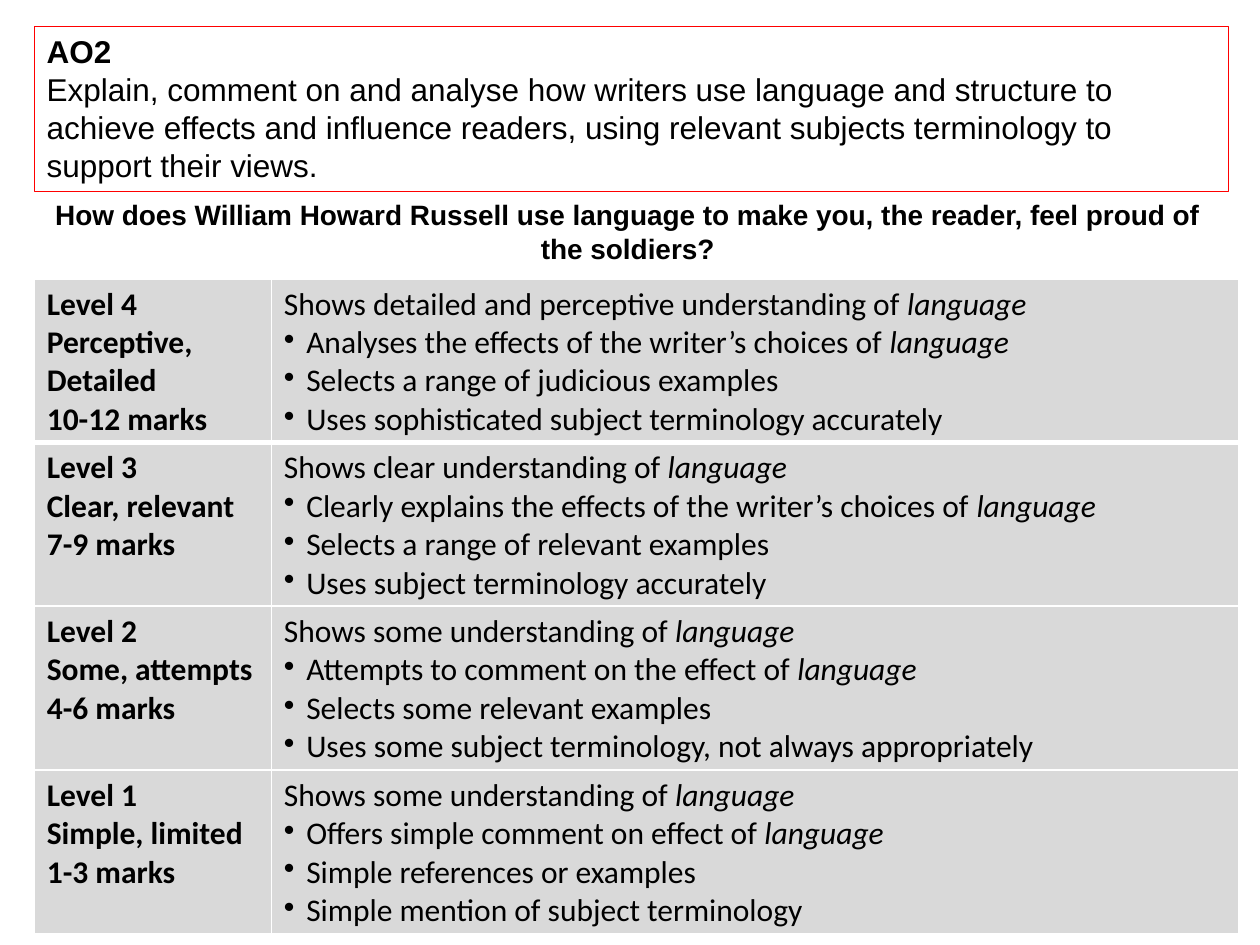
import pptx
import pptx.dml.color
import pptx.enum.shapes
import pptx.enum.text
import pptx.oxml
import pptx.oxml.ns
import pptx.util
from pptx.util import Cm

LEFT = Cm(0.69)
BLACK, WHITE, RED, GREY = "000000", "FFFFFF", "FF0000", "D9D9D9"
AIM = ("Explain, comment on and analyse how writers use language and structure to achieve effects "
       "and influence readers, using relevant subjects terminology to support their views.")
QUESTION = ("How does William Howard Russell use language to make you, the reader, "
            "feel proud of the soldiers?")
KEYWORD = "language"
LEVELS = [
    (["Level 4", "Perceptive, Detailed", "10-12 marks"],
     ["Shows detailed and perceptive understanding of language",
      "Analyses the effects of the writer’s choices of language",
      "Selects a range of judicious examples",
      "Uses sophisticated subject terminology accurately"]),
    (["Level 3", "Clear, relevant", "7-9 marks"],
     ["Shows clear understanding of language",
      "Clearly explains the effects of the writer’s choices of language",
      "Selects a range of relevant examples",
      "Uses subject terminology accurately"]),
    (["Level 2", "Some, attempts", "4-6 marks"],
     ["Shows some understanding of language",
      "Attempts to comment on the effect of language",
      "Selects some relevant examples",
      "Uses some subject terminology, not always appropriately"]),
    (["Level 1", "Simple, limited", "1-3 marks"],
     ["Shows some understanding of language",
      "Offers simple comment on effect of language",
      "Simple references or examples",
      "Simple mention of subject terminology"]),
]


def rgb(value):
    """Return the colour for a hex string."""
    return pptx.dml.color.RGBColor.from_string(value)


def add_run(p, text, size=18, font="Arial", bold=False, italic=False):
    """Add one formatted run to a paragraph."""
    r = p.add_run()
    r.text = text
    r.font.size = pptx.util.Pt(size)
    r.font.name = font
    r.font.bold = bold
    r.font.italic = italic
    r.font.color.rgb = rgb(BLACK)


def next_paragraph(tf, index):
    """Return the first paragraph of a frame, or a new one after it."""
    return tf.paragraphs[0] if index == 0 else tf.add_paragraph()


def set_bullet(p):
    """Give a paragraph a round bullet with a hanging indent."""
    pPr = p._p.get_or_add_pPr()
    pPr.set("marL", str(Cm(0.45)))
    pPr.set("indent", str(-Cm(0.45)))
    bullet = pptx.oxml.parse_xml(f'<a:buChar {pptx.oxml.ns.nsdecls("a")} char="•"/>')
    pPr.append(bullet)


def set_borders(cell, top, bottom):
    """Draw white borders round a cell, with top and bottom widths in points."""
    tcPr = cell._tc.get_or_add_tcPr()
    for i, (side, width) in enumerate(zip("LRTB", (1, 1, top, bottom))):
        tcPr.insert(i, pptx.oxml.parse_xml(
            f'<a:ln{side} {pptx.oxml.ns.nsdecls("a")} w="{pptx.util.Pt(width)}">'
            f'<a:solidFill><a:srgbClr val="{WHITE}"/></a:solidFill></a:ln{side}>'))


def add_objective(s):
    """Add the outlined box with the assessment objective."""
    sp = s.shapes.add_shape(pptx.enum.shapes.MSO_SHAPE.RECTANGLE,
                            LEFT, Cm(0.53), Cm(24.08), Cm(3.33))
    sp.shadow.inherit = False
    sp.fill.background()
    sp.line.color.rgb = rgb(RED)
    sp.line.width = pptx.util.Pt(0.75)
    tf = sp.text_frame
    tf.word_wrap = True
    tf.vertical_anchor = pptx.enum.text.MSO_ANCHOR.TOP
    for i, text in enumerate(("AO2", AIM)):
        p = next_paragraph(tf, i)
        p.alignment = pptx.enum.text.PP_ALIGN.LEFT
        add_run(p, text, bold=i == 0)


def set_title(s):
    """Place and format the question in the title placeholder."""
    sp = s.shapes.title
    sp.left, sp.top, sp.width, sp.height = LEFT, Cm(3.86), Cm(23.93), Cm(1.75)
    tf = sp.text_frame
    tf.word_wrap = True
    tf.auto_size = pptx.enum.text.MSO_AUTO_SIZE.NONE
    tf.vertical_anchor = pptx.enum.text.MSO_ANCHOR.TOP
    p = tf.paragraphs[0]
    p.alignment = pptx.enum.text.PP_ALIGN.CENTER
    add_run(p, QUESTION, size=16, bold=True)


def fill_level(tf, lines):
    """Write the bold name, description and marks of a level."""
    for i, line in enumerate(lines):
        add_run(next_paragraph(tf, i), line, font="Calibri", bold=True)


def fill_criteria(tf, lines):
    """Write a lead line and its bullets, with the keyword in italics."""
    for i, line in enumerate(lines):
        p = next_paragraph(tf, i)
        if i > 0:
            set_bullet(p)
        before, keyword, _ = line.partition(KEYWORD)
        add_run(p, before, font="Calibri")
        if keyword:
            add_run(p, keyword, font="Calibri", italic=True)


def add_levels(s):
    """Add the mark scheme table."""
    widths, row_height = (Cm(4.78), Cm(19.5)), Cm(3.3)
    table = s.shapes.add_table(len(LEVELS), len(widths), LEFT, Cm(5.62),
                               sum(widths), row_height * len(LEVELS)).table
    table.first_row = table.horz_banding = False
    for column, width in zip(table.columns, widths):
        column.width = width
    for i, (row, contents) in enumerate(zip(table.rows, LEVELS)):
        row.height = row_height
        for cell, fill, lines in zip(row.cells, (fill_level, fill_criteria), contents):
            cell.fill.solid()
            cell.fill.fore_color.rgb = rgb(GREY)
            cell.margin_bottom = Cm(0.05)
            set_borders(cell, 3 if i == 1 else 1, 3 if i == 0 else 1)
            fill(cell.text_frame, lines)


def main():
    """Build and save the slide."""
    prs = pptx.Presentation()
    prs.slide_width, prs.slide_height = Cm(25.4), Cm(19.05)
    s = prs.slides.add_slide(prs.slide_layouts[5])
    add_objective(s)
    set_title(s)
    add_levels(s)
    prs.save("out.pptx")


if __name__ == "__main__":
    main()
